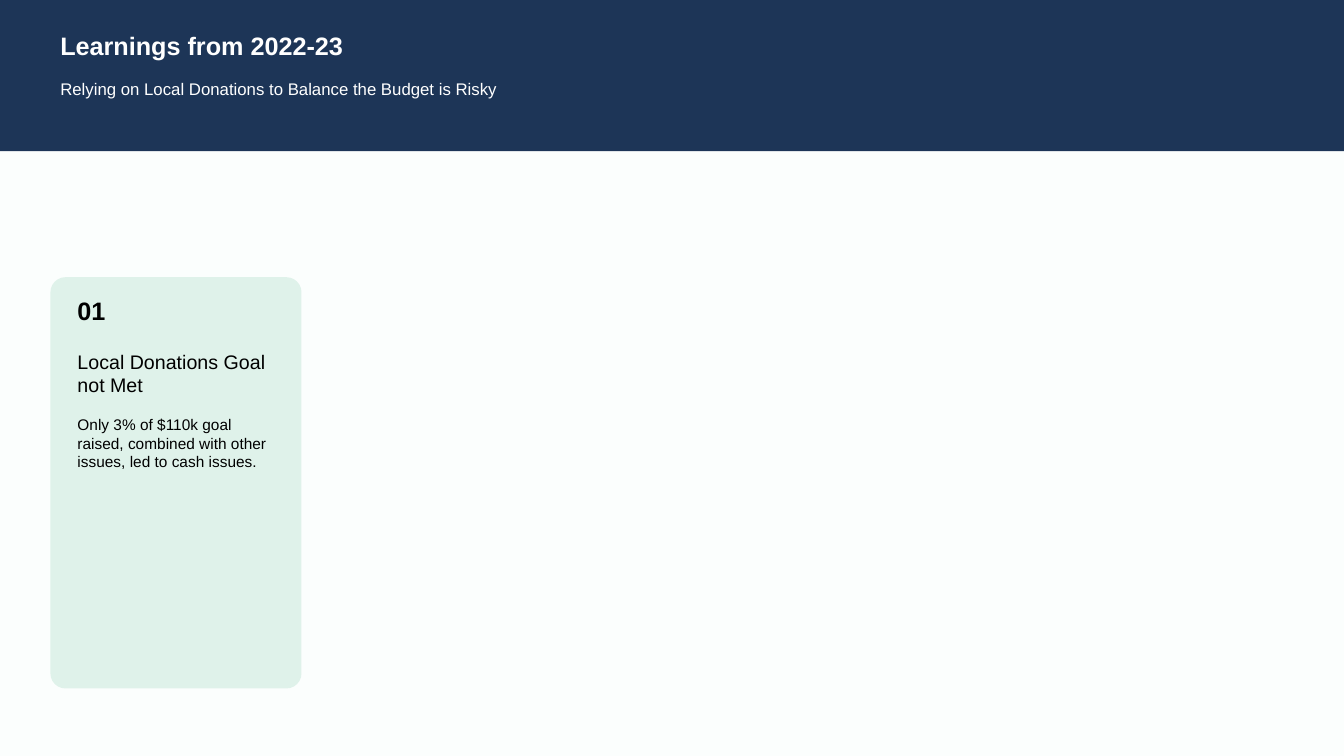
from pptx import Presentation
from pptx.dml.color import RGBColor
from pptx.enum.shapes import MSO_SHAPE
from pptx.enum.text import MSO_AUTO_SIZE
from pptx.util import Inches, Pt

RECTANGLE = MSO_SHAPE.RECTANGLE
ROUNDED = MSO_SHAPE.ROUNDED_RECTANGLE
GROW = MSO_AUTO_SIZE.SHAPE_TO_FIT_TEXT

COLORS = {
    "background": "FBFEFD",
    "banner": "1D3557",
    "card": "DFF2EA",
    "white": "FFFFFF",
    "black": "000000",
}
FONT = "Arial"
PANELS = [
    {"kind": RECTANGLE, "area": (0, 0, 13.33, 1.5), "color": "banner"},
    {"kind": ROUNDED, "area": (0.5, 2.75, 2.49, 4.08), "color": "card", "corner": 0.06},
]
TEXTS = [
    {"area": (0.5, 0.25, 12.33, 0.79), "color": "white", "wrap": True, "lines": [
        ("Learnings from 2022-23", 18, True, 0),
        ("Relying on Local Donations to Balance the Budget is Risky", 12, False, 13.2)]},
    {"area": (0.67, 3.42, 2.17, 1.31), "color": "black", "wrap": True, "lines": [
        ("Local Donations Goal not Met", 14, False, 0),
        ("Only 3% of $110k goal raised, combined with other issues, led to cash issues.",
         11, False, 13.2)]},
    {"area": (0.67, 2.88, 0.49, 0.4), "color": "black", "wrap": False, "lines": [
        ("01", 18, True, 0)]},
]


def rgb(name):
    return RGBColor.from_string(COLORS[name])


def add_panel(page, panel):
    shape = page.shapes.add_shape(panel["kind"], *map(Inches, panel["area"]))
    shape.shadow.inherit = False
    shape.fill.solid()
    shape.fill.fore_color.rgb = rgb(panel["color"])
    shape.line.fill.background()
    if "corner" in panel:
        shape.adjustments[0] = panel["corner"]


def add_text(page, item):
    box = page.shapes.add_textbox(*map(Inches, item["area"]))
    frame = box.text_frame
    frame.word_wrap = item["wrap"]
    frame.auto_size = GROW
    for index, (text, size, bold, gap) in enumerate(item["lines"]):
        para = frame.add_paragraph() if index else frame.paragraphs[0]
        para.text = text
        para.space_before = Pt(gap)
        para.font.name = FONT
        para.font.size = Pt(size)
        para.font.bold = bold
        para.font.color.rgb = rgb(item["color"])


def main():
    """Build the slide with the first learning on its card."""
    deck = Presentation()
    deck.slide_width, deck.slide_height = Inches(13.33), Inches(7.5)
    page = deck.slides.add_slide(deck.slide_layouts[6])
    page.background.fill.solid()
    page.background.fill.fore_color.rgb = rgb("background")
    for panel in PANELS:
        add_panel(page, panel)
    for item in TEXTS:
        add_text(page, item)
    deck.save("out.pptx")


if __name__ == "__main__":
    main()
